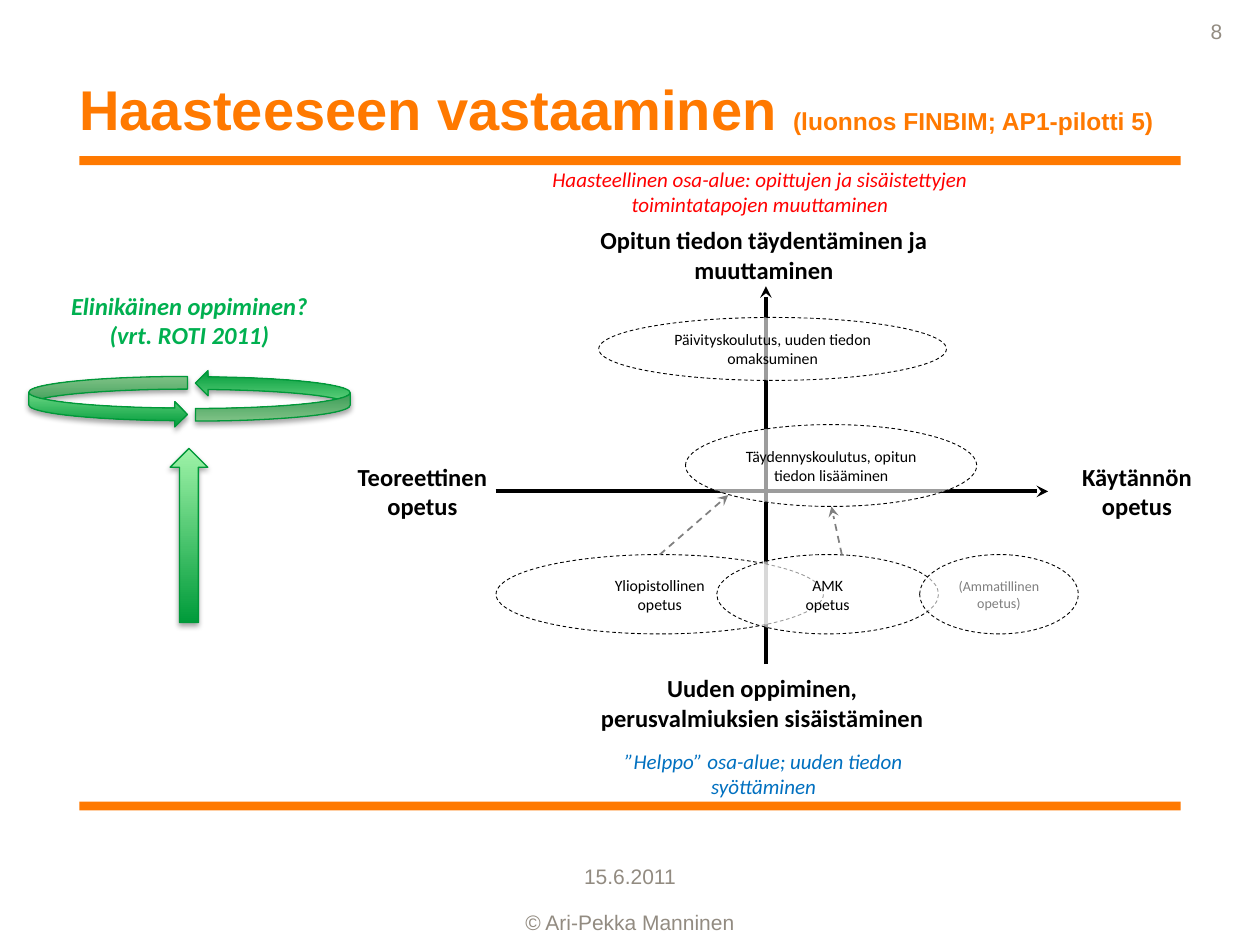
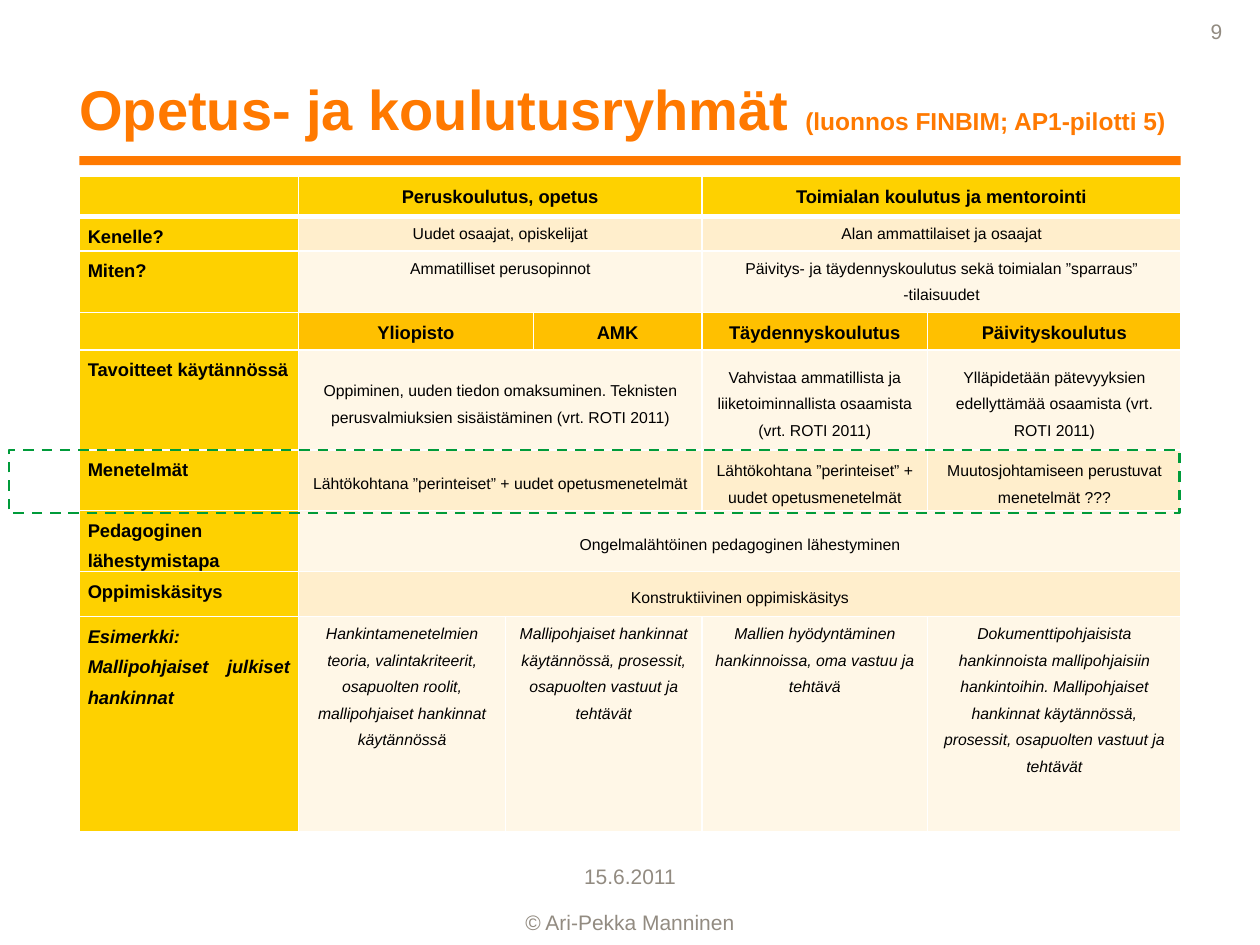
from dataclasses import dataclass
from typing import NamedTuple

from lxml import etree
from pptx import Presentation
from pptx.dml.color import RGBColor
from pptx.enum.dml import MSO_LINE
from pptx.enum.shapes import MSO_CONNECTOR, MSO_SHAPE
from pptx.enum.text import MSO_ANCHOR, MSO_AUTO_SIZE, PP_ALIGN
from pptx.oxml.ns import qn
from pptx.util import Cm, Pt

CENTER, LEFT, RIGHT, JUSTIFY = PP_ALIGN.CENTER, PP_ALIGN.LEFT, PP_ALIGN.RIGHT, PP_ALIGN.JUSTIFY
TOP, MIDDLE = MSO_ANCHOR.TOP, MSO_ANCHOR.MIDDLE
RECT, OVAL, DASH = MSO_SHAPE.RECTANGLE, MSO_SHAPE.OVAL, MSO_LINE.DASH
SIDE_TOP, SIDE_LEFT, SIDE_RIGHT = 0, 1, 3

COLORS = {
    "orange": "FF7900", "footer": "928B81", "black": "000000", "white": "FFFFFF",
    "grey": "808080", "muted": "7F7F7F", "red": "FF0000", "blue": "0070C0",
    "life": "00B050", "green": "009B3A", "pale_green": "9FF3A8", "green_edge": "009839",
    "gold": "FED100", "amber": "FFC000", "sand": "FFEECC", "cream": "FFF7E7",
}
TITLE_NOTE = "(luonnos FINBIM; AP1-pilotti 5)"
EDGE, CONTENT_W = 1.6, 22.2
BAR_H, TOP_BAR_Y, BOTTOM_BAR_Y = 0.18, 3.15, 16.16


class Box(NamedTuple):
    x: float
    y: float
    w: float
    h: float

    def emu(self) -> list[Cm]:
        return [Cm(v) for v in self]


@dataclass
class Label:
    text: str
    box: Box
    size: float = 14
    color: str = "black"
    bold: bool = True
    italic: bool = False


@dataclass
class Oval:
    text: str
    box: Box
    size: float = 9
    color: str = "black"


@dataclass
class Arrow:
    start: tuple[float, float]
    end: tuple[float, float]
    color: str = "black"
    width: float = 2.25
    dashed: bool = False


@dataclass
class Cell:
    text: str
    fill: str
    span: int = 1
    size: float = 9
    bold: bool = False
    italic: bool = False
    align: PP_ALIGN = CENTER
    anchor: MSO_ANCHOR = TOP


def rgb(name: str) -> RGBColor:
    return RGBColor.from_string(COLORS[name])


def add_run(p, text, size=12, color="black", font="Arial", bold=False, italic=False):
    r = p.add_run()
    r.text = text
    r.font.name, r.font.size = font, Pt(size)
    r.font.bold, r.font.italic = bold, italic
    r.font.color.rgb = rgb(color)


def write(tf, text, align=CENTER, spacing=None, **fmt):
    """Write one paragraph for each line of text."""
    for i, line in enumerate(text.split("\n")):
        p = tf.add_paragraph() if i else tf.paragraphs[0]
        p.alignment = align
        if spacing:
            p.line_spacing = spacing
        add_run(p, line, **fmt)


def frame(sp, anchor=TOP, inset=0.0):
    tf = sp.text_frame
    tf.word_wrap, tf.auto_size, tf.vertical_anchor = True, MSO_AUTO_SIZE.NONE, anchor
    tf.margin_left = tf.margin_right = tf.margin_top = tf.margin_bottom = Cm(inset)
    return tf


def add_text(slide, box: Box, text: str, anchor=TOP, inset=0.0, **fmt):
    sp = slide.shapes.add_textbox(*box.emu())
    write(frame(sp, anchor, inset), text, **fmt)
    return sp


def add_shape(slide, kind, box: Box, fill=None, line=None, width=0.5, dashed=False):
    sp = slide.shapes.add_shape(kind, *box.emu())
    sp.shadow.inherit = False
    if fill:
        sp.fill.solid()
        sp.fill.fore_color.rgb = rgb(fill)
    else:
        sp.fill.background()
    if line:
        sp.line.color.rgb, sp.line.width = rgb(line), Pt(width)
        if dashed:
            sp.line.dash_style = DASH
    else:
        sp.line.fill.background()
    return sp


def add_bar(slide, y: float):
    add_shape(slide, RECT, Box(EDGE, y, CONTENT_W, BAR_H), fill="orange")


def add_label(slide, label: Label):
    return add_text(slide, label.box, label.text, MIDDLE, 0.1, size=label.size,
                    color=label.color, font="Calibri", bold=label.bold, italic=label.italic)


def add_oval(slide, oval: Oval):
    """Draw a dashed, partly see-through ellipse with its text."""
    sp = add_shape(slide, OVAL, oval.box, "white", "black", dashed=True)
    color = sp.element.spPr.find(qn("a:solidFill"))[0]
    etree.SubElement(color, qn("a:alpha"), val="61000")
    write(frame(sp, MIDDLE, 0.1), oval.text, size=oval.size, color=oval.color, font="Calibri")
    return sp


def add_arrow(slide, arrow: Arrow):
    points = [Cm(v) for v in (*arrow.start, *arrow.end)]
    cxn = slide.shapes.add_connector(MSO_CONNECTOR.STRAIGHT, *points)
    cxn.line.color.rgb, cxn.line.width = rgb(arrow.color), Pt(arrow.width)
    if arrow.dashed:
        cxn.line.dash_style = DASH
    spPr = cxn.element.spPr
    etree.SubElement(spPr.find(qn("a:ln")), qn("a:tailEnd"), type="stealth")
    etree.SubElement(spPr, qn("a:effectLst"))
    return cxn


def add_green_arrow(slide, kind, box: Box, flip=False):
    """Draw a block arrow with an upward green gradient and a soft shadow."""
    sp = add_shape(slide, kind, box, line="green_edge", width=0.75)
    sp.fill.gradient()
    sp.fill.gradient_angle = 90
    for stop, position, name in zip(sp.fill.gradient_stops, (0, 1), ("green", "pale_green")):
        stop.position, stop.color.rgb = position, rgb(name)
    spPr = sp.element.spPr
    if flip:
        spPr.find(qn("a:xfrm")).set("flipV", "1")
    shadow = etree.SubElement(spPr.find(qn("a:effectLst")), qn("a:outerShdw"), blurRad="40000",
                              dist="23000", dir="5400000", rotWithShape="0")
    color = etree.SubElement(shadow, qn("a:srgbClr"), val=COLORS["black"])
    etree.SubElement(color, qn("a:alpha"), val="35000")


def set_borders(cell, top: float, bottom: float):
    tcPr = cell._tc.get_or_add_tcPr()
    for tag, width in (("lnL", 1), ("lnR", 1), ("lnT", top), ("lnB", bottom)):
        ln = etree.SubElement(tcPr, qn(f"a:{tag}"), w=str(Pt(width)))
        fill = etree.SubElement(ln, qn("a:solidFill"))
        etree.SubElement(fill, qn("a:srgbClr"), val=COLORS["white"])


def add_table(slide, x: float, y: float, widths, heights, rows: list[list[Cell]]):
    box = Box(x, y, sum(widths), sum(heights))
    table = slide.shapes.add_table(len(heights), len(widths), *box.emu()).table
    table.first_row = table.horz_banding = False
    for col, w in zip(table.columns, widths):
        col.width = Cm(w)
    for row, h in zip(table.rows, heights):
        row.height = Cm(h)
    for i, cells in enumerate(rows):
        j = 0
        for item in cells:
            for k in range(j, j + item.span):
                cell = table.cell(i, k)
                set_borders(cell, top=3 if i == 1 else 1, bottom=3 if i == 0 else 1)
                cell.fill.solid()
                cell.fill.fore_color.rgb = rgb(item.fill)
                cell.margin_left = cell.margin_right = Cm(0.17)
                cell.margin_top = cell.margin_bottom = 0
            cell = table.cell(i, j)
            if item.span > 1:
                cell.merge(table.cell(i, j + item.span - 1))
            cell.vertical_anchor = item.anchor
            if item.text:
                write(cell.text_frame, item.text, item.align, 1.5, size=item.size,
                      bold=item.bold, italic=item.italic)
            else:
                p = cell.text_frame.paragraphs[0]
                etree.SubElement(p._p, qn("a:endParaRPr"), sz="1050")
            j += item.span


def new_slide(prs, title: str, number: int):
    """Start a slide with the shared title, top bar, footers and page number."""
    slide = prs.slides.add_slide(prs.slide_layouts[5])
    sp = slide.shapes.title
    sp.left, sp.top, sp.width, sp.height = Box(EDGE, 1.35, CONTENT_W, 1.8).emu()
    tf = frame(sp)
    tf.margin_top = Cm(0.15)
    write(tf, title + " ", LEFT, size=32, color="orange", bold=True)
    add_run(tf.paragraphs[0], TITLE_NOTE, size=14, color="orange", bold=True)
    for text, box, align in (
        ("15.6.2011", Box(0, 17.4, 25.4, 0.94), CENTER),
        ("© Ari-Pekka Manninen", Box(0, 18.34, 25.4, 0.46), CENTER),
        (str(number), Box(22.99, 0.38, 1.65, 0.94), RIGHT),
    ):
        add_text(slide, box, text, align=align, color="footer")
    add_bar(slide, TOP_BAR_Y)
    return slide


def build_challenge(prs):
    slide = new_slide(prs, "Haasteeseen vastaaminen", 8)
    add_bar(slide, BOTTOM_BAR_Y)
    add_green_arrow(slide, MSO_SHAPE.CURVED_RIGHT_ARROW, Box(0.58, 7.59, 3.2, 1.02))
    add_green_arrow(slide, MSO_SHAPE.CURVED_LEFT_ARROW, Box(3.94, 7.47, 3.12, 1.02), flip=True)
    add_green_arrow(slide, MSO_SHAPE.UP_ARROW, Box(3.43, 9.04, 0.76, 3.51))

    theory = add_label(slide, Label("Teoreettinen opetus", Box(7.04, 9.27, 2.95, 1.27)))
    practice = add_label(slide, Label("Käytännön opetus", Box(21.13, 9.27, 3.58, 1.27)))
    add_arrow(slide, Arrow((15.44, 13.39), (15.44, 5.77)))
    axis = add_arrow(slide, Arrow((9.99, 9.9), (21.13, 9.9)))
    axis.begin_connect(theory, SIDE_RIGHT)
    axis.end_connect(practice, SIDE_LEFT)

    for label in (
        Label("Elinikäinen oppiminen?\n(vrt. ROTI 2011)", Box(0.58, 5.82, 6.48, 1.27),
              color="life", italic=True),
        Label("Uuden oppiminen,\nperusvalmiuksien sisäistäminen", Box(11.48, 13.39, 7.77, 1.55)),
        Label("Opitun tiedon täydentäminen ja muuttaminen", Box(10.74, 4.5, 9.32, 1.27)),
        Label("”Helppo” osa-alue; uuden tiedon syöttäminen", Box(12.45, 14.96, 5.89, 1.27),
              12, "blue", False, True),
        Label("Haasteellinen osa-alue: opittujen ja sisäistettyjen toimintatapojen muuttaminen",
              Box(9.86, 3.23, 10.92, 1.27), 12, "red", False, True),
    ):
        add_label(slide, label)

    university, *_ = [add_oval(slide, oval) for oval in (
        Oval("Yliopistollinen\nopetus", Box(10, 11.18, 6.6, 1.6)),
        Oval("AMK\nopetus", Box(14.45, 11.18, 4.47, 1.6)),
        Oval("(Ammatillinen\nopetus)", Box(18.54, 11.18, 3.2, 1.6), 8, "muted"),
        Oval("Täydennyskoulutus, opitun tiedon lisääminen", Box(13.82, 8.56, 5.87, 1.65)),
        Oval("Päivityskoulutus, uuden tiedon omaksuminen", Box(12.07, 6.4, 7.01, 1.27)),
    )]
    step = add_arrow(slide, Arrow((13.3, 11.18), (14.68, 9.98), "grey", 1, True))
    step.begin_connect(university, SIDE_TOP)
    add_arrow(slide, Arrow((16.97, 11.18), (16.76, 10.21), "grey", 1, True))


def build_groups(prs):
    slide = new_slide(prs, "Opetus- ja koulutusryhmät", 9)

    def head(text: str, span: int = 1, fill: str = "gold") -> Cell:
        return Cell(text, fill, span, 10.5, True)

    def topic(text: str, italic: bool = False) -> Cell:
        return Cell(text, "gold", 1, 10.5, True, italic, JUSTIFY)

    def mid(text: str, fill: str, span: int = 1) -> Cell:
        return Cell(text, fill, span, anchor=MIDDLE)

    def example(text: str, span: int = 1) -> Cell:
        return Cell(text, "cream", span, italic=True)

    methods = "Lähtökohtana ”perinteiset” + uudet opetusmenetelmät"
    rows = [
        [head(""), head("Peruskoulutus, opetus", 3), head("Toimialan koulutus ja mentorointi", 2)],
        [topic("Kenelle?"), Cell("Uudet osaajat, opiskelijat", "sand", 3),
         Cell("Alan ammattilaiset ja osaajat", "sand", 2)],
        [topic("Miten?"), Cell("Ammatilliset perusopinnot", "cream", 3),
         Cell("Päivitys- ja täydennyskoulutus sekä toimialan ”sparraus” -tilaisuudet", "cream", 2)],
        [head(""), head("Yliopisto", 2, "amber"), head("AMK", fill="amber"),
         head("Täydennyskoulutus", fill="amber"), head("Päivityskoulutus", fill="amber")],
        [topic("Tavoitteet käytännössä"),
         mid("Oppiminen, uuden tiedon omaksuminen. Teknisten perusvalmiuksien sisäistäminen "
             "(vrt. ROTI 2011)", "cream", 3),
         mid("Vahvistaa ammatillista ja liiketoiminnallista osaamista (vrt. ROTI 2011)", "cream"),
         mid("Ylläpidetään pätevyyksien edellyttämää osaamista (vrt. ROTI 2011)", "cream")],
        [topic("Menetelmät"), mid(methods, "sand", 3), mid(methods, "sand"),
         mid("Muutosjohtamiseen perustuvat menetelmät ???", "sand")],
        [topic("Pedagoginen lähestymistapa"),
         mid("Ongelmalähtöinen pedagoginen lähestyminen", "cream", 5)],
        [topic("Oppimiskäsitys"), mid("Konstruktiivinen oppimiskäsitys", "sand", 5)],
        [topic("Esimerkki: Mallipohjaiset julkiset hankinnat", italic=True),
         example("Hankintamenetelmien teoria, valintakriteerit, osapuolten roolit, "
                 "mallipohjaiset hankinnat käytännössä"),
         example("Mallipohjaiset hankinnat käytännössä, prosessit, osapuolten vastuut ja tehtävät", 2),
         example("Mallien hyödyntäminen hankinnoissa, oma vastuu ja tehtävä"),
         example("Dokumenttipohjaisista hankinnoista mallipohjaisiin hankintoihin. Mallipohjaiset "
                 "hankinnat käytännössä, prosessit, osapuolten vastuut ja tehtävät")],
    ]
    widths = (4.42, 4.17, 0.56, 3.4, 4.55, 5.11)
    heights = (0.81, 0.69, 1.24, 0.76, 2.01, 1.22, 1.09, 0.91, 4.34)
    add_table(slide, EDGE, 3.56, widths, heights, rows)
    add_shape(slide, RECT, Box(0.18, 9.07, 23.6, 1.27), line="green", width=1.5, dashed=True)


def main():
    prs = Presentation()
    prs.slide_width, prs.slide_height = Cm(25.4), Cm(19.05)
    build_challenge(prs)
    build_groups(prs)
    prs.save("out.pptx")


if __name__ == "__main__":
    main()
